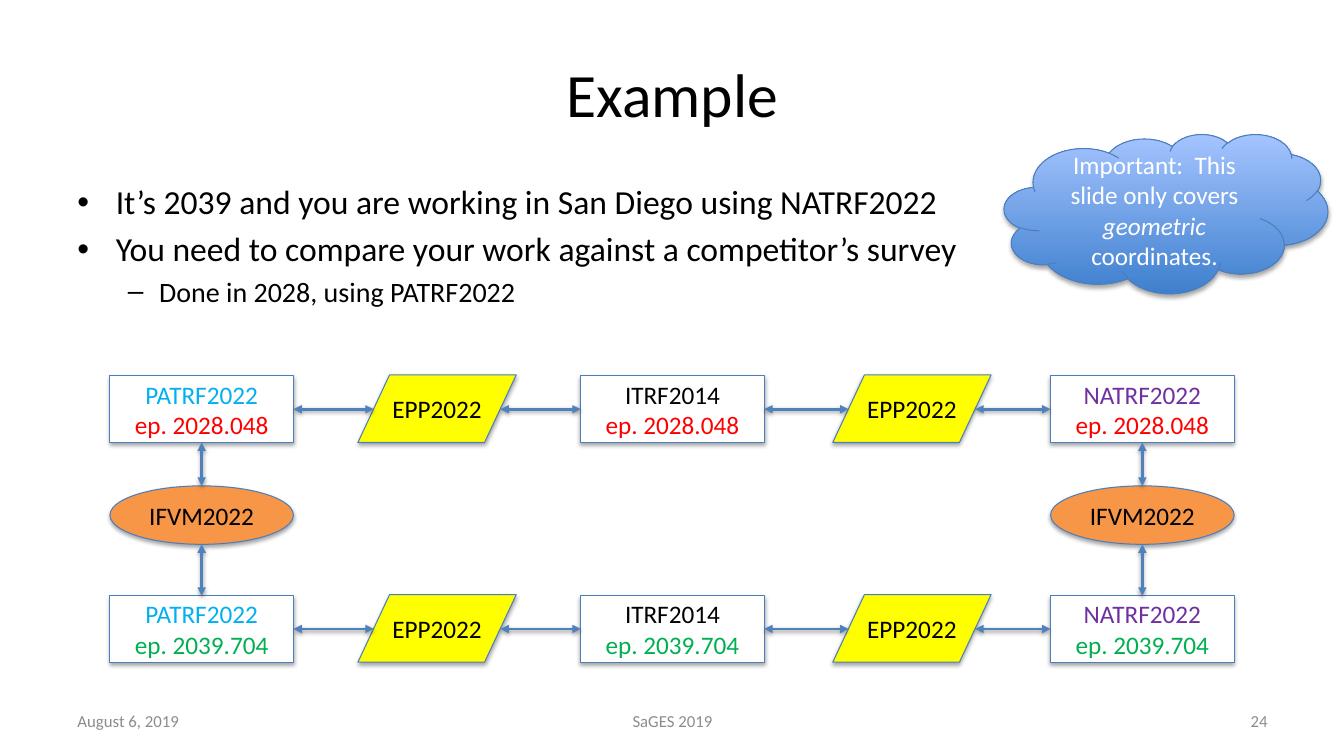
"""Build the slide comparing surveys between reference frames and epochs."""
from dataclasses import dataclass

from lxml import etree
from pptx import Presentation
from pptx.dml.color import RGBColor
from pptx.enum.shapes import MSO_CONNECTOR, MSO_SHAPE
from pptx.enum.text import MSO_ANCHOR, PP_ALIGN
from pptx.oxml.ns import qn
from pptx.shapes.autoshape import Shape
from pptx.slide import Slide
from pptx.util import Inches, Pt

COLORS = {
    "black": "000000", "white": "FFFFFF", "gray": "8C8C8C", "red": "FF0000",
    "green": "00B050", "cyan": "00B0F0", "purple": "7030A0", "yellow": "FFFF00",
    "orange": "F79646", "outline": "4B7EBC", "arrow": "4F81BD",
    "cloud_low": "3F80CE", "cloud_high": "A4C4FF",
}
FONT = "Calibri"


@dataclass(frozen=True)
class Span:
    text: str
    color: str = "black"
    size: float = 18
    italic: bool = False


@dataclass(frozen=True)
class Area:
    left: float
    top: float
    width: float
    height: float


@dataclass(frozen=True)
class Label:
    area: Area
    span: Span
    align: PP_ALIGN


@dataclass(frozen=True)
class Bullet:
    span: Span
    mark: str
    margin: float
    hang: float
    level: int = 0


@dataclass(frozen=True)
class Node:
    kind: MSO_SHAPE
    area: Area
    fill: str
    paragraphs: tuple[tuple[Span, ...], ...]
    inset: bool = True


@dataclass(frozen=True)
class Arrow:
    start: tuple[float, float]
    end: tuple[float, float]


@dataclass(frozen=True)
class Epoch:
    text: str
    color: str
    top: float


FRAMES = ((1.09, Span("PATRF2022", "cyan")), (5.76, Span("ITRF2014")),
          (10.42, Span("NATRF2022", "purple")))
EPOCHS = (Epoch("ep. 2028.048", "red", 3.73), Epoch("ep. 2039.704", "green", 5.91))
POLE_LEFTS = (3.55, 8.26)
FRAME_WIDTH, FRAME_HEIGHT = 1.82, 0.66
POLE_WIDTH, POLE_HEIGHT = 1.57, 0.67
MOTION_TOP, MOTION_HEIGHT = 4.82, 0.58

LABELS = (
    Label(Area(0.67, 0.3, 12, 1.25), Span("Example", size=44), PP_ALIGN.CENTER),
    Label(Area(0.67, 6.95, 3.11, 0.4), Span("August 6, 2019", "gray", 12), PP_ALIGN.LEFT),
    Label(Area(4.56, 6.95, 4.22, 0.4), Span("SaGES 2019", "gray", 12), PP_ALIGN.CENTER),
    Label(Area(9.56, 6.95, 3.11, 0.4), Span("24", "gray", 12), PP_ALIGN.RIGHT),
)
BULLETS = (
    Bullet(Span("It’s 2039 and you are working in San Diego using NATRF2022", size=24),
           "•", 0.38, 0.38),
    Bullet(Span("You need to compare your work against a competitor’s survey", size=24),
           "•", 0.38, 0.38),
    Bullet(Span("Done in 2028, using PATRF2022", size=20), "–", 0.81, 0.31, 1),
)
CLOUD = Node(MSO_SHAPE.CLOUD, Area(9.96, 1.33, 3.21, 1.58), "cloud_low", ((
    Span("Important:  This slide only covers ", "white"),
    Span("geometric", "white", italic=True), Span(" coordinates.", "white")),))


def rgb(name: str) -> RGBColor:
    return RGBColor.from_string(COLORS[name])


def lengths(area: Area) -> tuple[Inches, ...]:
    return tuple(Inches(n) for n in (area.left, area.top, area.width, area.height))


def add_span(paragraph, span: Span) -> None:
    run = paragraph.add_run()
    run.text = span.text
    run.font.name = FONT
    run.font.size = Pt(span.size)
    run.font.italic = span.italic
    run.font.color.rgb = rgb(span.color)


def add_shadow(properties, opacity: int, distance: float) -> None:
    effects = properties.find(qn("a:effectLst"))
    if effects is None:
        effects = etree.SubElement(properties, qn("a:effectLst"))
    shadow = etree.SubElement(effects, qn("a:outerShdw"), blurRad=str(Pt(3.1)),
                              dist=str(Pt(distance)), dir="5400000", rotWithShape="0")
    color = etree.SubElement(shadow, qn("a:srgbClr"), val=COLORS["black"])
    etree.SubElement(color, qn("a:alpha"), val=str(opacity * 1000))


def add_label(page: Slide, label: Label) -> None:
    frame = page.shapes.add_textbox(*lengths(label.area)).text_frame
    frame.word_wrap = True
    frame.vertical_anchor = MSO_ANCHOR.MIDDLE
    frame.paragraphs[0].alignment = label.align
    add_span(frame.paragraphs[0], label.span)


def add_bullets(page: Slide, area: Area, bullets: tuple[Bullet, ...]) -> None:
    frame = page.shapes.add_textbox(*lengths(area)).text_frame
    frame.word_wrap = True
    for index, bullet in enumerate(bullets):
        paragraph = frame.add_paragraph() if index else frame.paragraphs[0]
        paragraph.level = bullet.level
        if index:
            paragraph.space_before = Pt(bullet.span.size * 0.2)
        properties = paragraph._p.get_or_add_pPr()
        properties.set("marL", str(Inches(bullet.margin)))
        properties.set("indent", str(-Inches(bullet.hang)))
        etree.SubElement(properties, qn("a:buFont"), typeface="Arial")
        etree.SubElement(properties, qn("a:buChar"), char=bullet.mark)
        add_span(paragraph, bullet.span)


def add_node(page: Slide, node: Node) -> Shape:
    box = page.shapes.add_shape(node.kind, *lengths(node.area))
    box.fill.solid()
    box.fill.fore_color.rgb = rgb(node.fill)
    box.line.color.rgb = rgb("outline")
    box.line.width = Pt(0.75)
    box.shadow.inherit = False
    add_shadow(box._element.spPr, 35, 1.8)
    frame = box.text_frame
    frame.word_wrap = True
    frame.vertical_anchor = MSO_ANCHOR.MIDDLE
    if not node.inset:
        frame.margin_left = frame.margin_right = 0
        frame.margin_top = frame.margin_bottom = 0
    for index, spans in enumerate(node.paragraphs):
        paragraph = frame.add_paragraph() if index else frame.paragraphs[0]
        paragraph.alignment = PP_ALIGN.CENTER
        for span in spans:
            add_span(paragraph, span)
    return box


def add_arrow(page: Slide, arrow: Arrow) -> None:
    points = (Inches(n) for n in (*arrow.start, *arrow.end))
    connector = page.shapes.add_connector(MSO_CONNECTOR.STRAIGHT, *points)
    connector.line.color.rgb = rgb("arrow")
    connector.line.width = Pt(2)
    properties = connector._element.spPr
    for end in ("a:headEnd", "a:tailEnd"):
        etree.SubElement(properties.find(qn("a:ln")), qn(end), type="triangle")
    add_shadow(properties, 38, 1.6)


def diagram() -> tuple[list[Node], list[Arrow]]:
    nodes, arrows = [], []
    slant = POLE_WIDTH / 10
    for epoch in EPOCHS:
        middle = epoch.top + FRAME_HEIGHT / 2
        for left, name in FRAMES:
            nodes.append(Node(MSO_SHAPE.RECTANGLE, Area(left, epoch.top, FRAME_WIDTH, FRAME_HEIGHT),
                              "white", ((name,), (Span(epoch.text, epoch.color),))))
        for left, (before, _), (after, _) in zip(POLE_LEFTS, FRAMES, FRAMES[1:]):
            nodes.append(Node(MSO_SHAPE.FLOWCHART_DATA,
                              Area(left, epoch.top - 0.01, POLE_WIDTH, POLE_HEIGHT),
                              "yellow", ((Span("EPP2022"),),), inset=False))
            arrows.append(Arrow((before + FRAME_WIDTH, middle), (left + slant, middle)))
            arrows.append(Arrow((left + POLE_WIDTH - slant, middle), (after, middle)))
    for left, _ in (FRAMES[0], FRAMES[-1]):
        center = left + FRAME_WIDTH / 2
        nodes.append(Node(MSO_SHAPE.OVAL, Area(left, MOTION_TOP, FRAME_WIDTH, MOTION_HEIGHT),
                          "orange", ((Span("IFVM2022"),),)))
        arrows.append(Arrow((center, MOTION_TOP), (center, EPOCHS[0].top + FRAME_HEIGHT)))
        arrows.append(Arrow((center, MOTION_TOP + MOTION_HEIGHT), (center, EPOCHS[1].top)))
    return nodes, arrows


def main() -> None:
    deck = Presentation()
    deck.slide_width, deck.slide_height = Inches(13.33), Inches(7.5)
    page = deck.slides.add_slide(deck.slide_layouts[6])
    for label in LABELS:
        add_label(page, label)
    add_bullets(page, Area(0.67, 1.75, 12, 5.2), BULLETS)
    nodes, arrows = diagram()
    for node in nodes:
        add_node(page, node)
    for arrow in arrows:
        add_arrow(page, arrow)
    cloud = add_node(page, CLOUD)
    cloud.fill.gradient()
    cloud.fill.gradient_angle = 90
    for stop, name in zip(cloud.fill.gradient_stops, ("cloud_low", "cloud_high")):
        stop.color.rgb = rgb(name)
    deck.save("out.pptx")


if __name__ == "__main__":
    main()
